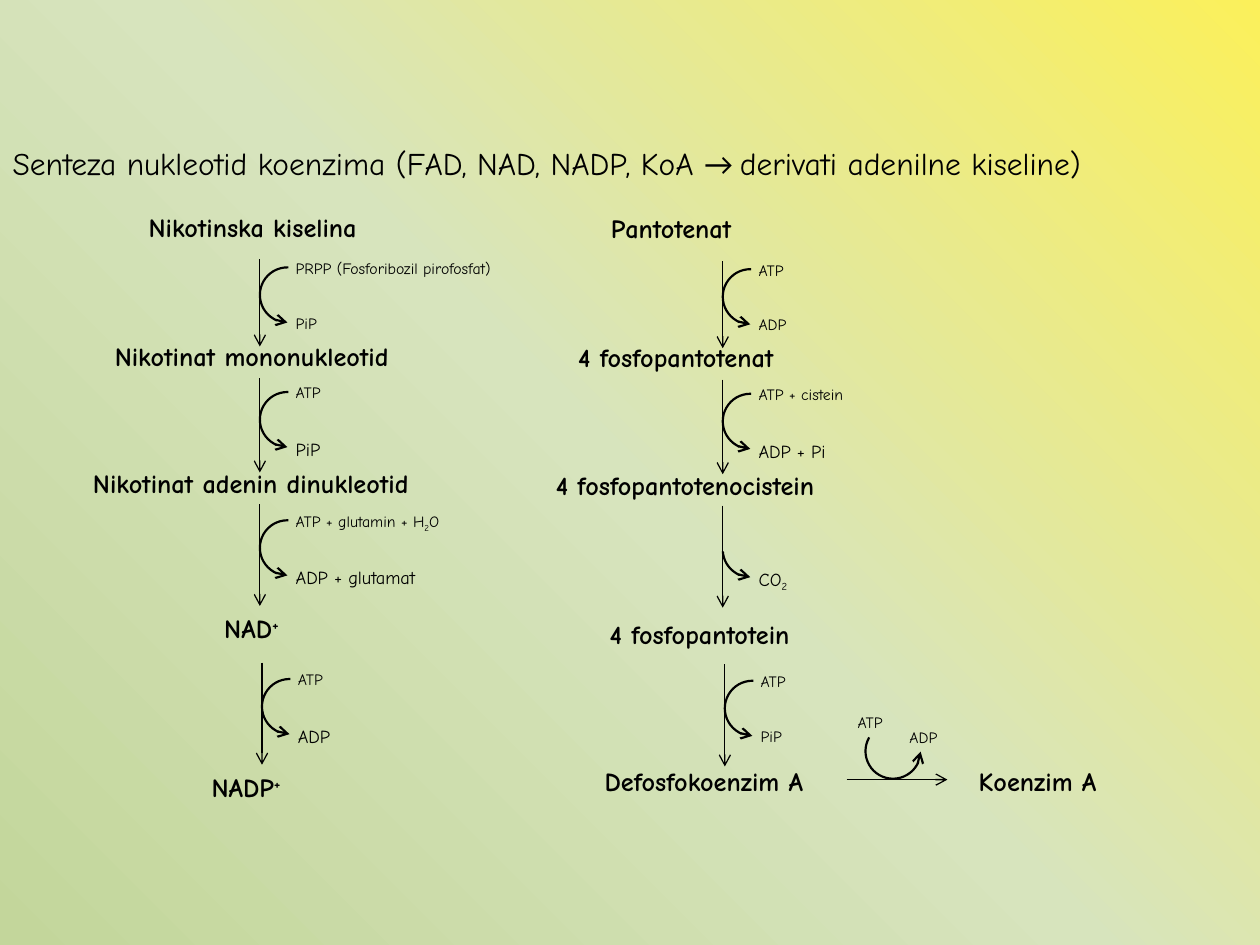
from copy import deepcopy

from lxml import etree
from pptx import Presentation
from pptx import util as u
from pptx.dml.color import RGBColor
from pptx.enum import shapes, text
from pptx.oxml.ns import qn

ARC = 31.5  # diameter of the curved arrows


def paint(color, code):
    color.rgb = RGBColor.from_string(code)


def box(*lens):
    return [u.Pt(n) for n in lens]


class Board:
    face = "Comic Neue"
    ink = "000000"
    shift = {"^": "30000", "_": "-25000"}

    def __init__(self, slide):
        self.slide = slide

    def back(self, stops, angle):
        fill = self.slide.background.fill
        fill.gradient()
        fill.gradient_angle = angle
        first = next(self.slide.element.iter(qn("a:gs")))
        for _ in stops[2:]:
            first.addnext(deepcopy(first))
        for stop, (place, code) in zip(fill.gradient_stops, stops):
            stop.position = place
            paint(stop.color, code)

    def run(self, para, words, size, bold=False, face=None):
        """Add one run; a leading ^ or _ raises or lowers it."""
        base = self.shift.get(words[0])
        run = para.add_run()
        run.text = words[1:] if base else words
        run.font.size = u.Pt(size)
        run.font.bold = bold
        run.font.name = face or self.face
        paint(run.font.color, self.ink)
        if base:
            run.font._element.set("baseline", base)

    def title(self, parts, *place):
        head = self.slide.shapes.title
        head.left, head.top, head.width, head.height = box(*place)
        frame = head.text_frame
        frame.vertical_anchor = text.MSO_ANCHOR.TOP
        frame.auto_size = text.MSO_AUTO_SIZE.NONE
        para = frame.paragraphs[0]
        para.alignment = text.PP_ALIGN.LEFT
        para.line_spacing = 1.5
        for words, face in parts:
            self.run(para, words, 18, face=face)

    def label(self, words, x, y, wide, size=9, bold=False, wrap=False):
        """Place text; a bar in the words parts its runs."""
        area = self.slide.shapes.add_textbox(*box(x, y, wide, size * 1.2 + 7.2))
        frame = area.text_frame
        frame.word_wrap = wrap
        frame.auto_size = text.MSO_AUTO_SIZE.SHAPE_TO_FIT_TEXT
        for part in words.split("|"):
            self.run(frame.paragraphs[0], part, size, bold)

    def name(self, words, x, y, wide):
        self.label(words, x, y, wide, 15, True, True)

    def stroke(self, item, width, end):
        item.line.width = u.Pt(width)
        paint(item.line.color, self.ink)
        tip = etree.SubElement(item.line._get_or_add_ln(), qn(end))
        tip.set("type", "arrow")

    def arrow(self, *ends):
        line = self.slide.shapes.add_connector(
            shapes.MSO_CONNECTOR.STRAIGHT, *box(*ends))
        self.stroke(line, 0.75, "a:tailEnd")
        etree.SubElement(line._element.spPr, qn("a:effectLst"))

    def curve(self, x, y, start, stop):
        """Draw an arc between two angles in degrees, its tip at the start."""
        arc = self.slide.shapes.add_shape(
            shapes.MSO_SHAPE.ARC, *box(x, y, ARC, ARC))
        # Angles are stored in 60000ths, adjustments in 100000ths
        arc.adjustments[0] = start * 0.6
        arc.adjustments[1] = stop * 0.6
        arc.fill.background()
        arc.shadow.inherit = False
        self.stroke(arc, 1.25, "a:headEnd")

    def step(self, x, row, gain, loss):
        """Draw one reaction; gain and loss are (words, width, size)."""
        top, end, bend = row
        self.arrow(x, top, x, end)
        self.curve(x, bend, 90, 272 if gain else 176)
        for part, drop in ((gain, -8.6), (loss, 22.7)):
            if part:
                words, wide, size = part
                self.label(words, x + 13.4, bend + drop, wide, size)


# Arrow start, arrow end and top of the arc for each reaction
ROWS = [(148.3, 198, 152.8), (216, 270, 224),
        (288, 346.3, 297.3), (378.7, 437, 388)]

ATP = ("ATP", 32.5, 9)
ADP = ("ADP", 32.5, 9)
PIP = ("PiP", 27, 9)
# Left edge, downward shift, then the gain and loss of each reaction
PATHS = [
    (148.5, 0, [
        (("PRPP (Fosforibozil pirofosfat)", 142, 9), PIP),
        (ATP, ("PiP", 29, 10.5)),
        (("ATP + glutamin + H|_2|O", 105, 9), ("ADP + glutamat", 90, 10.5)),
        (ATP, ("ADP", 39, 10.5))]),
    (413, 1, [
        (ATP, ADP),
        (("ATP + cistein", 70.5, 9), ("ADP + Pi", 55.5, 10.5)),
        (None, ("CO|_2", 34, 10.5)),
        (ATP, PIP)]),
]

NAMES = [
    ("Nikotinska kiselina", 77.8, 117.4, 150.5),
    ("Nikotinat mononukleotid", 58.5, 190.8, 189.5),
    ("Nikotinat adenin dinukleotid", 46, 263.7, 214),
    ("NAD|^+", 121, 346.3, 59),
    ("NADP|^+", 113.8, 437, 67),
    ("Pantotenat", 342, 118, 150.5),
    ("4 fosfopantotenat", 323.3, 191.6, 189.5),
    ("4 fosfopantotenocistein", 310.5, 264.7, 214),
    ("4 fosfopantotein", 341.3, 349.8, 137),
    ("Defosfokoenzim A", 338.4, 433.5, 163.5),
    ("Koenzim A", 552.2, 433.5, 107.3),
]


def main():
    deck = Presentation()
    deck.slide_width, deck.slide_height = box(720, 540)
    board = Board(deck.slides.add_slide(deck.slide_layouts[5]))
    board.back([(0, "C3D69B"), (0.5, "D7E4BD"), (1, "FBF05B")], 45)
    board.title([("Senteza nukleotid koenzima (FAD, NAD, NADP, KoA ", None),
                 ("→ ", "Calibri"),
                 ("derivati adenilne kiseline)", None)], 0, 67.7, 720, 40.3)

    for entry in NAMES:
        board.name(*entry)
    for x, drop, steps in PATHS:
        for i, (row, (gain, loss)) in enumerate(zip(ROWS, steps)):
            nudge = 1.2 if i == 3 else 0
            board.step(x + nudge, [y + drop for y in row], gain, loss)

    board.arrow(483.8, 445.5, 541.4, 445.5)
    board.curve(494.6, 413.5, 1, 210)
    board.label("ATP", 483, 404, 34.5)
    board.label("ADP", 512.6, 412.5, 32.5)
    deck.save("out.pptx")


if __name__ == "__main__":
    main()
